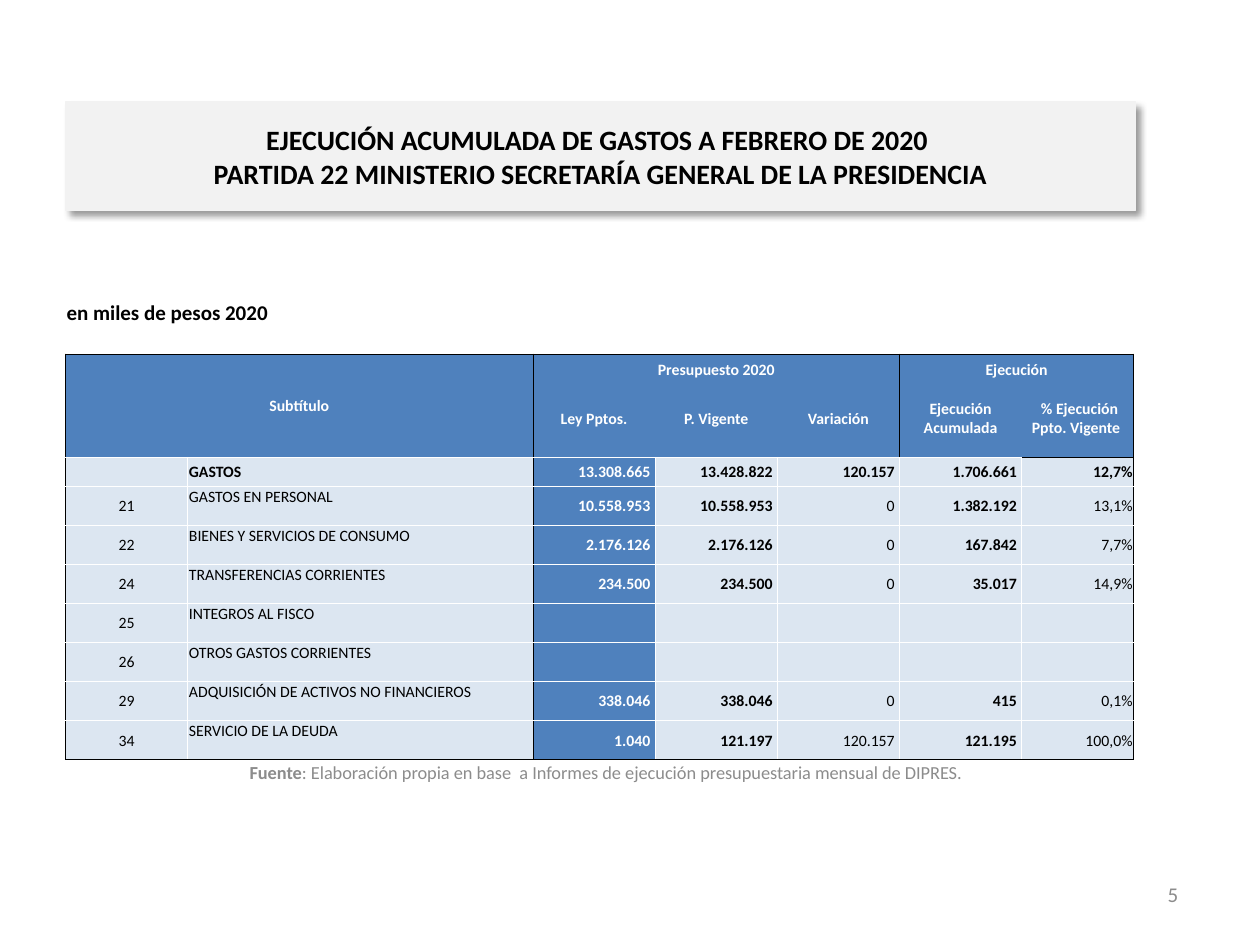
from dataclasses import dataclass

from lxml import etree
from pptx import Presentation
from pptx.dml.color import RGBColor
from pptx.enum.text import MSO_ANCHOR, PP_ALIGN
from pptx.oxml.ns import qn
from pptx.util import Inches, Pt

BLACK = RGBColor(0x00, 0x00, 0x00)
WHITE = RGBColor(0xFF, 0xFF, 0xFF)
GRAY = RGBColor(0x8C, 0x8C, 0x8C)
BANNER = RGBColor(0xF2, 0xF2, 0xF2)
BLUE = RGBColor(0x4F, 0x81, 0xBD)
PALE_BLUE = RGBColor(0xDC, 0xE6, 0xF1)
FONT = "Calibri"
NO_TABLE_STYLE = "{2D5ABB26-0587-4C30-8999-92F81FD0307C}"

COLUMN_WIDTHS = [0.97, 2.74, 0.97, 0.97, 0.97, 0.97, 0.89]
ROW_HEIGHTS = [0.2, 0.62, 0.23] + [0.31] * 7
HEADER_ROWS = 2
LAST_ROW, LAST_COLUMN = len(ROW_HEIGHTS), len(COLUMN_WIDTHS)


@dataclass(frozen=True)
class Header:
    row: int
    column: int
    text: str
    rows: int = 1
    columns: int = 1
    anchor: MSO_ANCHOR = MSO_ANCHOR.MIDDLE


@dataclass(frozen=True)
class Expense:
    code: str
    name: str
    amounts: tuple[str, ...] = ("", "", "", "")
    percent: str = ""


@dataclass(frozen=True)
class Caption:
    left: float
    top: float
    width: float
    height: float
    runs: tuple[tuple[str, bool], ...]
    size: float
    color: RGBColor
    align: PP_ALIGN
    anchor: MSO_ANCHOR = MSO_ANCHOR.MIDDLE


HEADERS = [
    Header(0, 0, "Subtítulo", rows=2, columns=2),
    Header(0, 2, "Presupuesto 2020", columns=3, anchor=MSO_ANCHOR.BOTTOM),
    Header(0, 5, "Ejecución", columns=2, anchor=MSO_ANCHOR.BOTTOM),
    Header(1, 2, "Ley Pptos."),
    Header(1, 3, "P. Vigente"),
    Header(1, 4, "Variación"),
    Header(1, 5, "Ejecución Acumulada"),
    Header(1, 6, " % Ejecución Ppto. Vigente "),
]
EXPENSES = [
    Expense("", "GASTOS", ("13.308.665", "13.428.822", "120.157", "1.706.661"), "12,7%"),
    Expense("21", "GASTOS EN PERSONAL", ("10.558.953", "10.558.953", "0", "1.382.192"), "13,1%"),
    Expense("22", "BIENES Y SERVICIOS DE CONSUMO", ("2.176.126", "2.176.126", "0", "167.842"), "7,7%"),
    Expense("24", "TRANSFERENCIAS CORRIENTES", ("234.500", "234.500", "0", "35.017"), "14,9%"),
    Expense("25", "INTEGROS AL FISCO"),
    Expense("26", "OTROS GASTOS CORRIENTES"),
    Expense("29", "ADQUISICIÓN DE ACTIVOS NO FINANCIEROS", ("338.046", "338.046", "0", "415"), "0,1%"),
    Expense("34", "SERVICIO DE LA DEUDA", ("1.040", "121.197", "120.157", "121.195"), "100,0%"),
]
CAPTIONS = [
    Caption(0.52, 5.93, 8.58, 0.4,
            (("Fuente", True),
             (": Elaboración propia en base  a Informes de ejecución presupuestaria mensual de DIPRES.", False)),
            10.5, GRAY, PP_ALIGN.CENTER),
    Caption(7.12, 6.9, 2.33, 0.4, (("5", False),), 12, GRAY, PP_ALIGN.RIGHT),
    Caption(0.43, 2.33, 8.58, 0.35, (("en miles de pesos 2020", True),),
            12, BLACK, PP_ALIGN.LEFT, MSO_ANCHOR.TOP),
]


def add_run(paragraph, text: str, size: float, color: RGBColor, bold: bool) -> None:
    run = paragraph.add_run()
    run.text = text
    run.font.name, run.font.size, run.font.bold = FONT, Pt(size), bold
    run.font.color.rgb = color


def add_title(slide, lines: list[str]) -> None:
    title = slide.shapes.title
    title.left, title.top = Inches(0.52), Inches(0.81)
    title.width, title.height = Inches(8.49), Inches(0.86)
    title.fill.solid()
    title.fill.fore_color.rgb = BANNER
    title.line.color.rgb = BANNER
    title.line.width = Pt(0.75)
    effects = etree.SubElement(title._element.spPr, qn("a:effectLst"))
    shadow = etree.SubElement(effects, qn("a:outerShdw"), blurRad=str(Pt(4)), dist=str(Pt(3)),
                              dir="2700000", algn="tl", rotWithShape="0")
    color = etree.SubElement(shadow, qn("a:srgbClr"), val=str(BLACK))
    etree.SubElement(color, qn("a:alpha"), val="40000")
    title.text_frame.vertical_anchor = MSO_ANCHOR.MIDDLE
    paragraph = title.text_frame.paragraphs[0]
    paragraph.alignment = PP_ALIGN.CENTER
    for index, line in enumerate(lines):
        if index:
            paragraph.add_line_break()
        add_run(paragraph, line, 16, BLACK, True)


def add_caption(slide, caption: Caption) -> None:
    box = slide.shapes.add_textbox(Inches(caption.left), Inches(caption.top),
                                   Inches(caption.width), Inches(caption.height))
    frame = box.text_frame
    frame.word_wrap = True
    frame.vertical_anchor = caption.anchor
    frame.paragraphs[0].alignment = caption.align
    for text, bold in caption.runs:
        add_run(frame.paragraphs[0], text, caption.size, caption.color, bold)


def vertical_rule(edge: int, row: int) -> RGBColor | None:
    """Colour of the line at a column edge; the header has lines only between its groups."""
    if edge in (0, 2, LAST_COLUMN) or (edge == 5 and row < HEADER_ROWS):
        return BLACK
    return None if row < HEADER_ROWS else WHITE


def horizontal_rule(edge: int, column: int) -> RGBColor | None:
    if edge in (0, LAST_ROW) or (edge == HEADER_ROWS and column == LAST_COLUMN - 1):
        return BLACK
    return None if edge < HEADER_ROWS else WHITE


def set_borders(cell, row: int, column: int, rows: int, columns: int) -> None:
    properties = cell._tc.get_or_add_tcPr()
    colors = {
        "a:lnL": vertical_rule(column, row),
        "a:lnR": vertical_rule(column + columns, row),
        "a:lnT": horizontal_rule(row, column),
        "a:lnB": horizontal_rule(row + rows, column),
    }
    for index, (tag, color) in enumerate(colors.items()):
        line = etree.Element(qn(tag), w=str(Pt(0.5)))
        if color is None:
            etree.SubElement(line, qn("a:noFill"))
        else:
            fill = etree.SubElement(line, qn("a:solidFill"))
            etree.SubElement(fill, qn("a:srgbClr"), val=str(color))
        properties.insert(index, line)


def fill_cell(table, row: int, column: int, text: str, align: PP_ALIGN, bold: bool,
              anchor: MSO_ANCHOR = MSO_ANCHOR.MIDDLE, rows: int = 1, columns: int = 1) -> None:
    cell = table.cell(row, column)
    if rows * columns > 1:
        cell.merge(table.cell(row + rows - 1, column + columns - 1))
    is_blue = row < HEADER_ROWS or column == 2
    cell.fill.solid()
    cell.fill.fore_color.rgb = BLUE if is_blue else PALE_BLUE
    cell.margin_left = cell.margin_right = cell.margin_top = Inches(0.01)
    cell.margin_bottom = 0
    cell.vertical_anchor = anchor
    paragraph = cell.text_frame.paragraphs[0]
    paragraph.alignment = align
    if text:
        add_run(paragraph, text, 9, WHITE if is_blue else BLACK, bold)
    else:
        etree.SubElement(paragraph._p, qn("a:endParaRPr"), sz="900")
    set_borders(cell, row, column, rows, columns)


def add_expense_table(slide) -> None:
    frame = slide.shapes.add_table(LAST_ROW, LAST_COLUMN, Inches(0.52), Inches(2.81),
                                   Inches(sum(COLUMN_WIDTHS)), Inches(sum(ROW_HEIGHTS)))
    table = frame.table
    table.first_row = table.horz_banding = False
    table._tbl.tblPr.find(qn("a:tableStyleId")).text = NO_TABLE_STYLE
    for column, width in zip(table.columns, COLUMN_WIDTHS):
        column.width = Inches(width)
    for row, height in zip(table.rows, ROW_HEIGHTS):
        row.height = Inches(height)
    for header in HEADERS:
        fill_cell(table, header.row, header.column, header.text, PP_ALIGN.CENTER, True,
                  header.anchor, header.rows, header.columns)
    for row, expense in enumerate(EXPENSES, HEADER_ROWS):
        total = row == HEADER_ROWS
        fill_cell(table, row, 0, expense.code, PP_ALIGN.CENTER, False)
        fill_cell(table, row, 1, expense.name, PP_ALIGN.JUSTIFY, total,
                  MSO_ANCHOR.MIDDLE if total else MSO_ANCHOR.TOP)
        for column, amount in enumerate(expense.amounts, 2):
            fill_cell(table, row, column, amount and f"{amount} ", PP_ALIGN.RIGHT, total or column != 4)
        fill_cell(table, row, LAST_COLUMN - 1, expense.percent, PP_ALIGN.RIGHT, total)


def main() -> None:
    presentation = Presentation()
    presentation.slide_width, presentation.slide_height = Inches(10), Inches(7.5)
    slide = presentation.slides.add_slide(presentation.slide_layouts[5])
    add_title(slide, ["EJECUCIÓN ACUMULADA DE GASTOS A FEBRERO DE 2020 ",
                      "PARTIDA 22 MINISTERIO SECRETARÍA GENERAL DE LA PRESIDENCIA"])
    for caption in CAPTIONS:
        add_caption(slide, caption)
    add_expense_table(slide)
    presentation.save("out.pptx")


if __name__ == "__main__":
    main()
